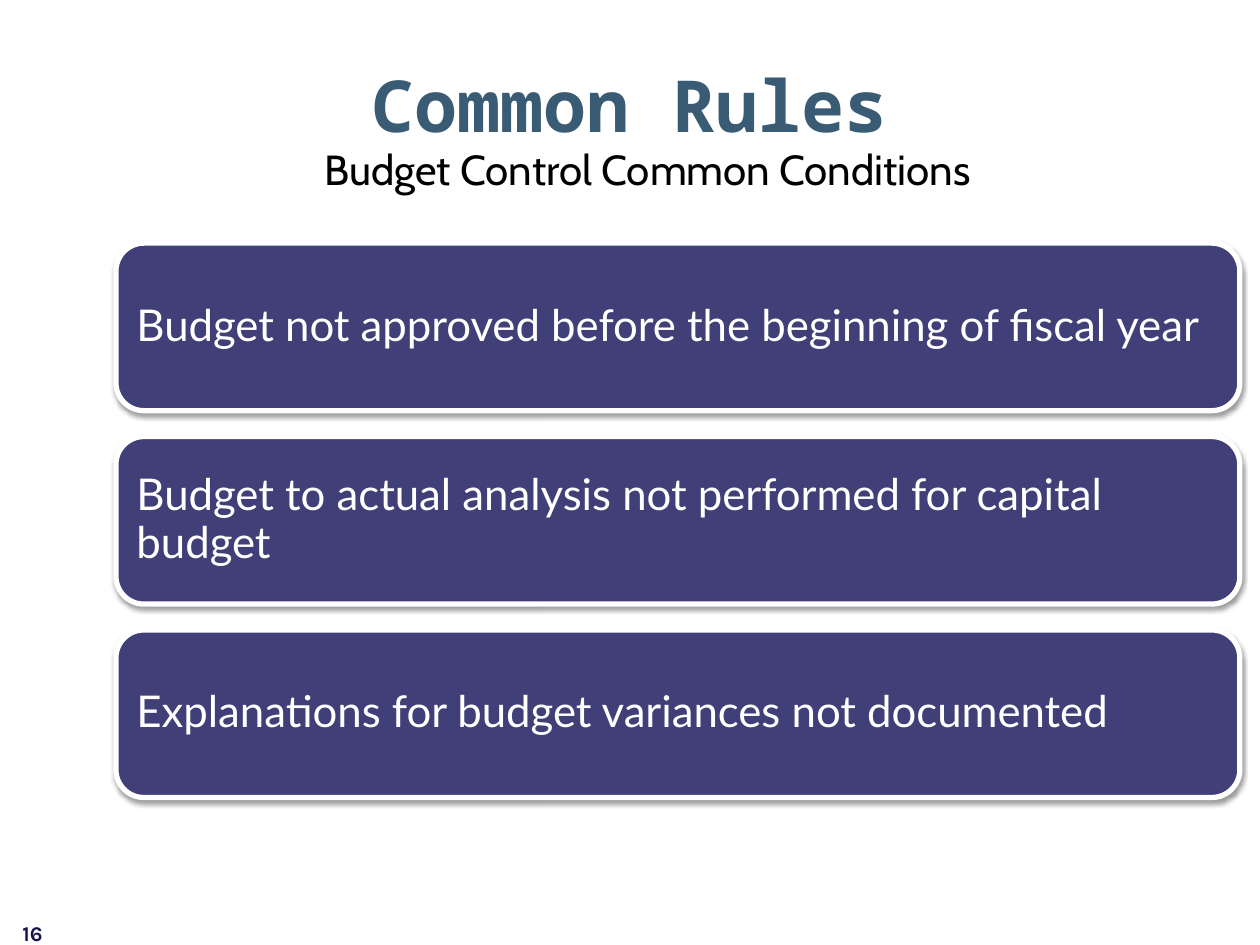
"""Build the Common Rules slide: a title, a subtitle and a stack of condition cards."""
from lxml import etree
from pptx import Presentation
from pptx.dml.color import RGBColor
from pptx.enum.shapes import MSO_SHAPE
from pptx.enum.text import MSO_ANCHOR, PP_ALIGN
from pptx.oxml.ns import qn
from pptx.util import Inches, Pt

ROUNDED = MSO_SHAPE.ROUNDED_RECTANGLE
TOP, MIDDLE = MSO_ANCHOR.TOP, MSO_ANCHOR.MIDDLE
LEFT, CENTER = PP_ALIGN.LEFT, PP_ALIGN.CENTER

COLORS = {"card": "413F77", "white": "FFFFFF", "title": "395B74",
          "black": "000000", "number": "17144D"}
CONDITIONS = [
    "Budget not approved before the beginning of fiscal year",
    "Budget to actual analysis not performed for capital budget",
    "Explanations for budget variances not documented",
]
LABELS = [
    ("Budget Control Common Conditions", (1.1, 1.09, 8.08, 0.5),
     dict(font="Cabin", size=24, color="black", align=CENTER)),
    ("Common Rules", (0.5, 0.48, 9, 1.07),
     dict(font="Noto Sans Mono", size=41, color="title", bold=True, align=CENTER,
          inset=(0.1, 0))),
    ("16", (0.08, 7.26, 2.33, 0.4),
     dict(font="Karla", size=12, color="number", bold=True)),
]
CARD_LEFT, CARD_TOP, CARD_WIDTH, CARD_HEIGHT = 0.92, 1.93, 8.92, 1.33
CARD_PITCH = 1.535


def rgb(name):
    return RGBColor.from_string(COLORS[name])


def write(sp, text, font, size, color, bold=False, align=LEFT, anchor=TOP,
          inset=(0.1, 0.05), spacing=1.0):
    tf = sp.text_frame
    tf.word_wrap = True
    tf.vertical_anchor = anchor
    tf.margin_left = tf.margin_right = Inches(inset[0])
    tf.margin_top = tf.margin_bottom = Inches(inset[1])
    p = tf.paragraphs[0]
    p.alignment = align
    p.line_spacing = spacing
    r = p.add_run()
    r.text = text
    r.font.name, r.font.size, r.font.bold = font, Pt(size), bold
    r.font.color.rgb = rgb(color)


def add_shadow(sp):
    sp.shadow.inherit = False
    effects = sp.element.spPr.find(qn("a:effectLst"))
    shadow = etree.SubElement(effects, qn("a:outerShdw"), blurRad=str(Pt(3.1)),
                              dist=str(Pt(1.6)), dir="5400000", rotWithShape="0")
    color = etree.SubElement(shadow, qn("a:srgbClr"), val=COLORS["black"])
    etree.SubElement(color, qn("a:alpha"), val="38000")


def add_card(s, row, text):
    box = (CARD_LEFT, CARD_TOP + row * CARD_PITCH, CARD_WIDTH, CARD_HEIGHT)
    sp = s.shapes.add_shape(ROUNDED, *map(Inches, box))
    sp.fill.solid()
    sp.fill.fore_color.rgb = rgb("card")
    sp.line.color.rgb = rgb("white")
    sp.line.width = Pt(3)
    add_shadow(sp)
    write(sp, text, font="Lato", size=25, color="white", anchor=MIDDLE,
          inset=(0.1, 0.1), spacing=0.9)


def main():
    prs = Presentation()
    prs.slide_width, prs.slide_height = Inches(10), Inches(7.5)
    s = prs.slides.add_slide(prs.slide_layouts[6])
    for row, text in enumerate(CONDITIONS):
        add_card(s, row, text)
    for text, box, style in LABELS:
        write(s.shapes.add_textbox(*map(Inches, box)), text, **style)
    prs.save("out.pptx")


if __name__ == "__main__":
    main()
